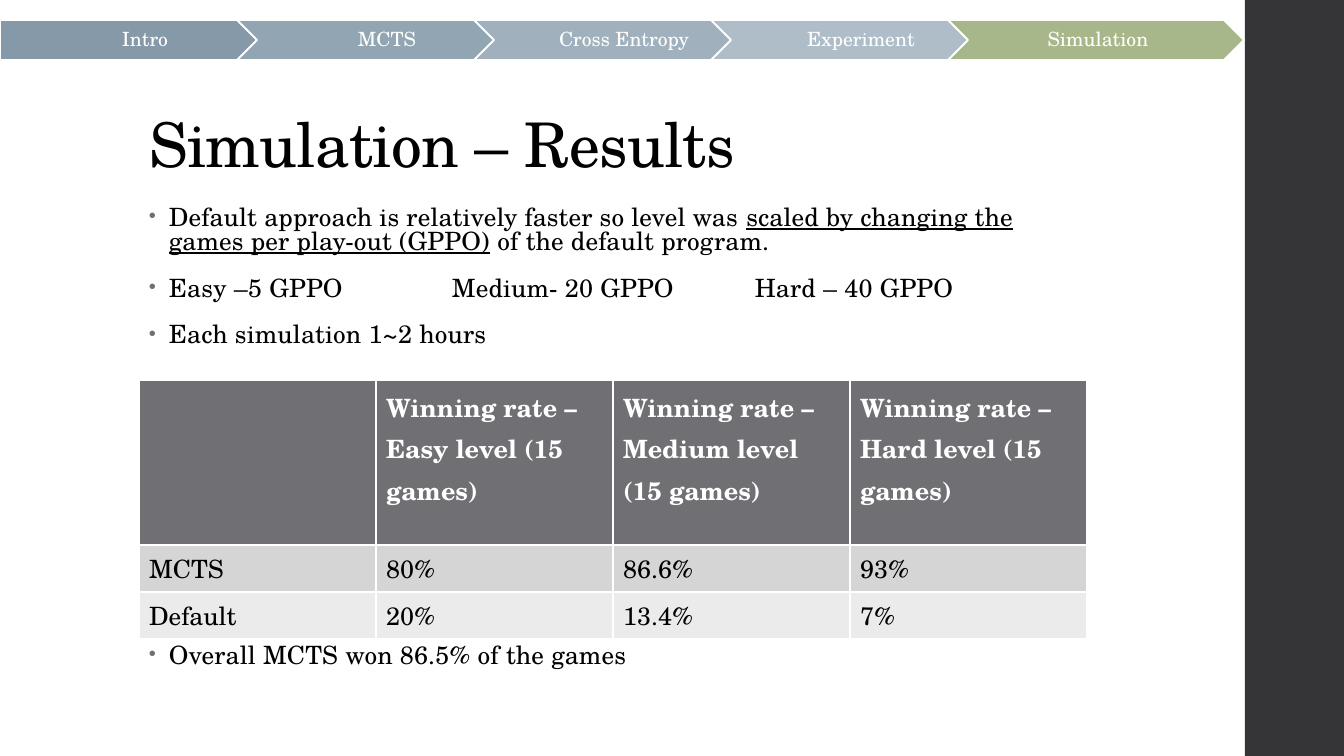
from lxml import etree
from pptx import Presentation
from pptx.dml.color import RGBColor
from pptx.enum.shapes import MSO_SHAPE
from pptx.enum.text import MSO_ANCHOR, PP_ALIGN
from pptx.oxml.ns import qn
from pptx.util import Emu, Pt

RECTANGLE, PENTAGON, CHEVRON = MSO_SHAPE.RECTANGLE, MSO_SHAPE.PENTAGON, MSO_SHAPE.CHEVRON
TOP, MIDDLE, BOTTOM = MSO_ANCHOR.TOP, MSO_ANCHOR.MIDDLE, MSO_ANCHOR.BOTTOM
LEFT, CENTER = PP_ALIGN.LEFT, PP_ALIGN.CENTER

FONT = "TeX Gyre Schola"
COLORS = {
    "black": "000000", "white": "FFFFFF", "sidebar": "353537",
    "bullet": "6F6F74", "header": "6F6F74",
    "odd row": "D5D5D6", "even row": "EBEBEB",
}

TITLE = "Simulation – Results"
STEPS = [
    ("Intro", "8599A8"),
    ("MCTS", "92A5B3"),
    ("Cross Entropy", "A0B1BD"),
    ("Experiment", "AEBDC8"),
    ("Simulation", "A7B789"),
]
# Each bullet is a list of (text, underlined) parts.
SETUP = [
    [("Default approach is relatively faster so level was ", False),
     ("scaled by changing the games per play-out (GPPO)", True),
     (" of the default program.", False)],
    [("Easy –5 GPPO\t\tMedium- 20 GPPO\tHard – 40 GPPO", False)],
    [("Each simulation 1~2 hours", False)],
]
CONCLUSION = [[("Overall MCTS won 86.5% of the games", False)]]
RESULTS = [
    ("", "Winning rate –Easy level (15 games)",
     "Winning rate –Medium level (15 games)", "Winning rate –Hard level (15 games)"),
    ("MCTS", "80%", "86.6%", "93%"),
    ("Default", "20%", "13.4%", "7%"),
]

SLIDE_W, SLIDE_H = 1344, 756
SIDEBAR_X = 1245
STEP_PITCH, STEP_W, STEP_Y, STEP_H = 237, 296, 20, 40
CONTENT_X, CONTENT_W = 139, 948
TABLE_Y, ROW_HEIGHTS = 380, (165, 47, 47)
BULLET_INDENT, TAB_PITCH = 20, 101


def px(length):
    return Emu(round(length * 914400 / 100.8))


def box(x, y, width, height):
    return px(x), px(y), px(width), px(height)


def color(name):
    return RGBColor.from_string(COLORS.get(name, name))


def style(paragraph, size, ink, bold=False, tracking=0):
    """Set the paragraph's font; tracking is in hundredths of a point."""
    font = paragraph.font
    font.name, font.size, font.bold = FONT, Pt(size), bold
    font.color.rgb = color(ink)
    if tracking:
        font._rPr.set("spc", str(tracking))


def add_filled(slide, kind, place, fill):
    shape = slide.shapes.add_shape(kind, *place)
    shape.shadow.inherit = False
    shape.fill.solid()
    shape.fill.fore_color.rgb = color(fill)
    shape.line.fill.background()
    return shape


def add_step(slide, index, label, fill):
    kind = CHEVRON if index else PENTAGON
    step = add_filled(slide, kind, box(index * STEP_PITCH, STEP_Y, STEP_W, STEP_H), fill)
    step.line.color.rgb = color("white")
    step.line.width = Pt(1.35)
    frame = step.text_frame
    frame.margin_left, frame.margin_right = px(6), px(2)
    frame.margin_top = frame.margin_bottom = px(4)
    frame.vertical_anchor = MIDDLE
    paragraph = frame.paragraphs[0]
    paragraph.text = label
    paragraph.alignment = CENTER
    paragraph.line_spacing = 0.9
    style(paragraph, 14, "white")


def add_bullet_mark(paragraph):
    props = paragraph._p.get_or_add_pPr()
    props.set("marL", str(px(BULLET_INDENT)))
    props.set("indent", str(-px(BULLET_INDENT)))
    props.set("defTabSz", str(px(TAB_PITCH)))
    tint = etree.SubElement(props, qn("a:buClr"))
    etree.SubElement(tint, qn("a:srgbClr"), val=COLORS["bullet"])
    etree.SubElement(props, qn("a:buSzPct"), val="80000")
    etree.SubElement(props, qn("a:buFont"), typeface="Arial")
    etree.SubElement(props, qn("a:buChar"), char="•")


def add_bullets(slide, bullets, y, height):
    frame = slide.shapes.add_textbox(*box(CONTENT_X, y, CONTENT_W, height)).text_frame
    frame.word_wrap = True
    for index, parts in enumerate(bullets):
        paragraph = frame.add_paragraph() if index else frame.paragraphs[0]
        add_bullet_mark(paragraph)
        paragraph.line_spacing = 0.8
        paragraph.space_before, paragraph.space_after = Pt(14), Pt(2)
        style(paragraph, 18, "black", tracking=10)
        for text, underlined in parts:
            run = paragraph.add_run()
            run.text = text
            if underlined:
                run.font.underline = True


def add_results(slide):
    columns = len(RESULTS[0])
    table = slide.shapes.add_table(
        len(RESULTS), columns,
        *box(CONTENT_X, TABLE_Y, CONTENT_W, sum(ROW_HEIGHTS))).table
    for column in table.columns:
        column.width = px(CONTENT_W // columns)
    fills = ("header", "odd row", "even row")
    for r, (values, height, fill) in enumerate(zip(RESULTS, ROW_HEIGHTS, fills)):
        table.rows[r].height = px(height)
        is_header = r == 0
        for c, value in enumerate(values):
            cell = table.cell(r, c)
            cell.fill.solid()
            cell.fill.fore_color.rgb = color(fill)
            cell.vertical_anchor = TOP
            paragraph = cell.text_frame.paragraphs[0]
            paragraph.text = value
            paragraph.line_spacing = 1.07 if is_header else 1.0
            style(paragraph, 18, "white" if is_header else "black", bold=is_header)


def add_title(slide):
    title = slide.shapes.title
    title.left, title.top, title.width, title.height = box(CONTENT_X, 40, 1068, 146)
    frame = title.text_frame
    frame.vertical_anchor = BOTTOM
    paragraph = frame.paragraphs[0]
    paragraph.text = TITLE
    paragraph.alignment = LEFT
    paragraph.line_spacing = 0.9
    style(paragraph, 44, "black", tracking=-50)


def main():
    deck = Presentation()
    deck.slide_width, deck.slide_height = px(SLIDE_W), px(SLIDE_H)
    slide = deck.slides.add_slide(deck.slide_layouts[5])
    add_filled(slide, RECTANGLE, box(SIDEBAR_X, 0, SLIDE_W - SIDEBAR_X, SLIDE_H), "sidebar")
    add_title(slide)
    add_bullets(slide, SETUP, 202, 176)
    for index, (label, fill) in enumerate(STEPS):
        add_step(slide, index, label, fill)
    add_results(slide)
    add_bullets(slide, CONCLUSION, 640, 41)
    deck.save("out.pptx")


if __name__ == "__main__":
    main()
